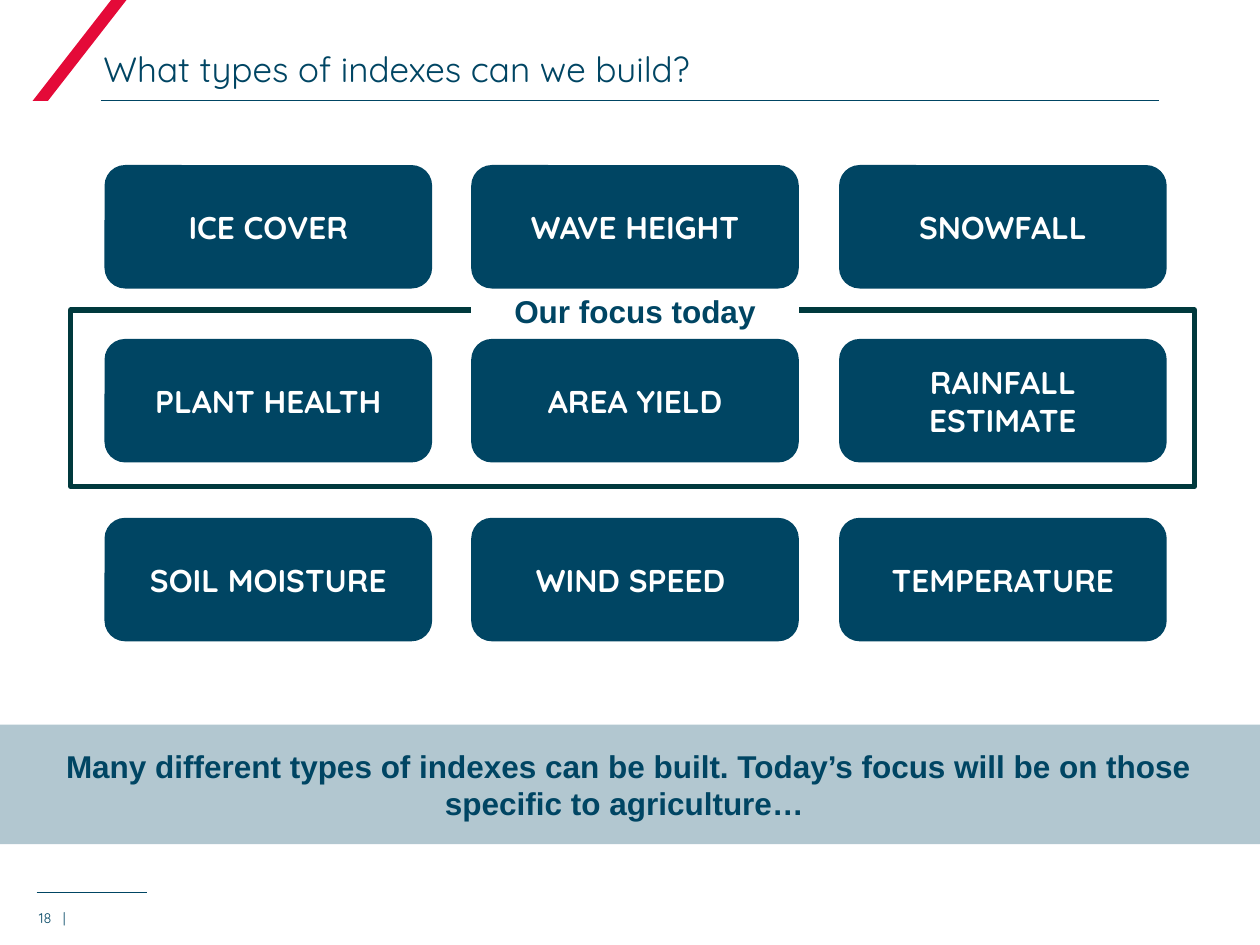
from lxml.etree import SubElement
from pptx import Presentation
from pptx.dml.color import RGBColor
from pptx.enum.shapes import MSO_CONNECTOR, MSO_SHAPE
from pptx.enum.text import MSO_ANCHOR, MSO_AUTO_SIZE, PP_ALIGN
from pptx.oxml.ns import qn
from pptx.util import Inches, Pt

NAVY, RED, GREY, WHITE, DARK = "004563", "E40A38", "B2C7D0", "FFFFFF", "00393D"
HEADING_FONT, BODY_FONT = "Quicksand", "Arial"


def color(value):
    return RGBColor.from_string(value)


class SlideBuilder:
    """Holds the slide and its shared style."""

    def __init__(self, slide):
        self.slide = slide

    def set_text(self, shape, text, size, font, ink, bold=False,
                 align=PP_ALIGN.CENTER, anchor=MSO_ANCHOR.MIDDLE, inset=None, tab=None):
        frame = shape.text_frame
        frame.auto_size = MSO_AUTO_SIZE.NONE
        frame.word_wrap = True
        frame.vertical_anchor = anchor
        if inset is not None:
            frame.margin_left = frame.margin_right = inset
            frame.margin_top = frame.margin_bottom = inset
        frame.text = text
        paragraph = frame.paragraphs[0]
        paragraph.alignment = align
        if tab is not None:
            tabs = SubElement(paragraph._p.get_or_add_pPr(), qn("a:tabLst"))
            SubElement(tabs, qn("a:tab"), pos=str(tab), algn="l")
        paragraph.font.size = Pt(size)
        paragraph.font.name = font
        paragraph.font.bold = bold
        paragraph.font.color.rgb = color(ink)

    def title(self, text, left, top, width, height):
        title = self.slide.shapes.title
        title.left, title.top = Inches(left), Inches(top)
        title.width, title.height = Inches(width), Inches(height)
        self.set_text(title, text, 20, HEADING_FONT, NAVY, align=PP_ALIGN.LEFT,
                      anchor=MSO_ANCHOR.BOTTOM, inset=0)

    def shape(self, kind, left, top, width, height, fill=None, line=None, weight=0):
        shape = self.slide.shapes.add_shape(
            kind, Inches(left), Inches(top), Inches(width), Inches(height))
        shape.shadow.inherit = False
        if fill:
            shape.fill.solid()
            shape.fill.fore_color.rgb = color(fill)
        else:
            shape.fill.background()
        if line:
            shape.line.color.rgb = color(line)
            shape.line.width = Pt(weight)
        else:
            shape.line.fill.background()
        return shape

    def rule(self, left, right, y):
        rule = self.slide.shapes.add_connector(
            MSO_CONNECTOR.STRAIGHT, Inches(left), Inches(y), Inches(right), Inches(y))
        rule.line.color.rgb = color(NAVY)
        rule.line.width = Pt(0.5)
        SubElement(rule._element.spPr, qn("a:effectLst"))

    def card(self, text, left, top):
        card = self.shape(MSO_SHAPE.ROUNDED_RECTANGLE, left, top, 2.6, 0.98, NAVY)
        self.set_text(card, text, 18, HEADING_FONT, WHITE, bold=True)

    def page_number(self, text, left, top, width, height):
        box = self.slide.shapes.add_textbox(
            Inches(left), Inches(top), Inches(width), Inches(height))
        self.set_text(box, text, 8, HEADING_FONT, NAVY, align=PP_ALIGN.LEFT,
                      anchor=MSO_ANCHOR.BOTTOM, inset=0, tab=Inches(0.19))


def main():
    presentation = Presentation()
    presentation.slide_width, presentation.slide_height = Inches(10), Inches(7.5)
    slide = presentation.slides.add_slide(presentation.slide_layouts[5])
    builder = SlideBuilder(slide)

    builder.rule(0.29, 1.17, 7.08)
    slash = builder.shape(MSO_SHAPE.PARALLELOGRAM, 0.26, -0.02, 0.76, 0.82, RED)
    slash.adjustments[0] = 0.84
    builder.rule(0.8, 9.2, 0.8)
    builder.page_number("18\t|", 0.31, 7.12, 0.4, 0.23)
    builder.title("What types of indexes can we build?", 0.82, 0.34, 8.4, 0.37)

    column_lefts = (0.83, 3.74, 6.66)
    index_rows = (
        (1.31, ("ICE COVER", "WAVE HEIGHT", "SNOWFALL")),
        (2.69, ("PLANT HEALTH", "AREA YIELD", "RAINFALL ESTIMATE")),
        (4.11, ("SOIL MOISTURE", "WIND SPEED ", "TEMPERATURE")),
    )
    for top, names in index_rows:
        for left, name in zip(column_lefts, names):
            builder.card(name, left, top)

    banner = builder.shape(MSO_SHAPE.RECTANGLE, -0.02, 5.75, 10.02, 0.95, GREY)
    builder.set_text(banner, "Many different types of indexes can be built. Today’s focus "
                     "will be on those specific to agriculture… ",
                     18, BODY_FONT, NAVY, bold=True)

    builder.shape(MSO_SHAPE.RECTANGLE, 0.56, 2.46, 8.92, 1.4, line=DARK, weight=3)
    focus = builder.shape(MSO_SHAPE.RECTANGLE, column_lefts[1], 2.32, 2.6, 0.3, WHITE)
    builder.set_text(focus, "Our focus today", 18, BODY_FONT, NAVY, bold=True,
                     anchor=MSO_ANCHOR.TOP, inset=0)

    presentation.save("out.pptx")


if __name__ == "__main__":
    main()
